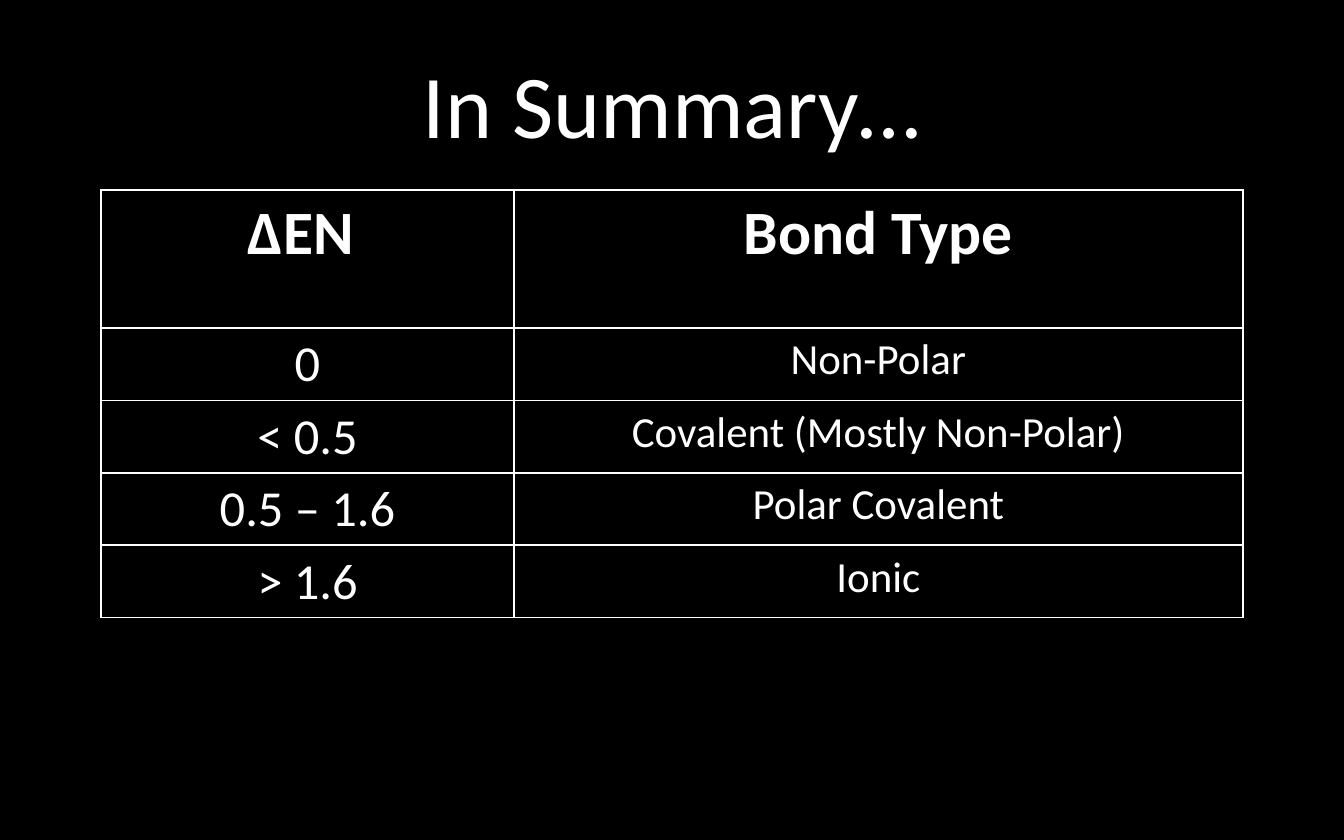
from lxml import etree
from pptx import Presentation
from pptx.dml.color import RGBColor
from pptx.enum.text import MSO_ANCHOR, PP_ALIGN
from pptx.oxml.ns import qn
from pptx.util import Pt

EMU_PER_PX = 914400 / 134.4
CENTER = PP_ALIGN.CENTER
MIDDLE = MSO_ANCHOR.MIDDLE
TOP = MSO_ANCHOR.TOP
TITLE_ONLY = 5
COLORS = {"background": "000000", "text": "FFFFFF", "border": "FFFFFF"}
FONT = "Calibri"

BONDS = [
    ("ΔEN ", "Bond Type"),
    ("0", "Non-Polar"),
    ("< 0.5", "Covalent (Mostly Non-Polar)"),
    ("0.5 – 1.6", "Polar Covalent"),
    ("> 1.6", "Ionic"),
]
COLUMN_WIDTHS = (413, 729)
HEADER_HEIGHT = 138
ROW_HEIGHT = 72
HEADER_SIZE = 33
BODY_SIZES = (27, 23)


def px(value):
    return round(value * EMU_PER_PX)


def color(name):
    return RGBColor.from_string(COLORS[name])


class SlideBuilder:
    def __init__(self, presentation):
        self.slide = presentation.slides.add_slide(presentation.slide_layouts[TITLE_ONLY])
        fill = self.slide.background.fill
        fill.solid()
        fill.fore_color.rgb = color("background")

    def add_text(self, text_frame, text, size, bold=False):
        text_frame.word_wrap = True
        paragraph = text_frame.paragraphs[0]
        paragraph.alignment = CENTER
        run = paragraph.add_run()
        run.text = text
        run.font.name = FONT
        run.font.size = Pt(size)
        run.font.bold = bold
        run.font.color.rgb = color("text")

    def title(self, text, left, top, width, height, size):
        shape = self.slide.shapes.title
        shape.left, shape.top = px(left), px(top)
        shape.width, shape.height = px(width), px(height)
        shape.text_frame.vertical_anchor = MIDDLE
        self.add_text(shape.text_frame, text, size)

    def borders(self, cell):
        properties = cell._tc.get_or_add_tcPr()
        for index, side in enumerate(("a:lnL", "a:lnR", "a:lnT", "a:lnB")):
            line = etree.Element(qn(side), w=str(Pt(1)))
            fill = etree.SubElement(line, qn("a:solidFill"))
            etree.SubElement(fill, qn("a:srgbClr"), val=COLORS["border"])
            properties.insert(index, line)

    def table(self, rows, left, top, widths, heights):
        frame = self.slide.shapes.add_table(
            len(rows), len(widths), px(left), px(top), px(sum(widths)), px(sum(heights)))
        table = frame.table
        table.horz_banding = False
        for column, width in zip(table.columns, widths):
            column.width = px(width)
        for row_index, (row, height) in enumerate(zip(rows, heights)):
            table.rows[row_index].height = px(height)
            header = row_index == 0
            for column_index, text in enumerate(row):
                cell = table.cell(row_index, column_index)
                cell.fill.background()
                cell.vertical_anchor = TOP
                cell.margin_left = cell.margin_right = px(13)
                cell.margin_top, cell.margin_bottom = px(6), px(5)
                size = HEADER_SIZE if header else BODY_SIZES[column_index]
                self.add_text(cell.text_frame, text, size, bold=header)
                self.borders(cell)


def main():
    presentation = Presentation()
    presentation.slide_width = px(1344)
    presentation.slide_height = px(840)
    builder = SlideBuilder(presentation)
    builder.title("In Summary…", 101, 15, 1142, 175, 48)
    heights = [HEADER_HEIGHT] + [ROW_HEIGHT] * (len(BONDS) - 1)
    builder.table(BONDS, 101, 190, COLUMN_WIDTHS, heights)
    presentation.save("out.pptx")


if __name__ == "__main__":
    main()
